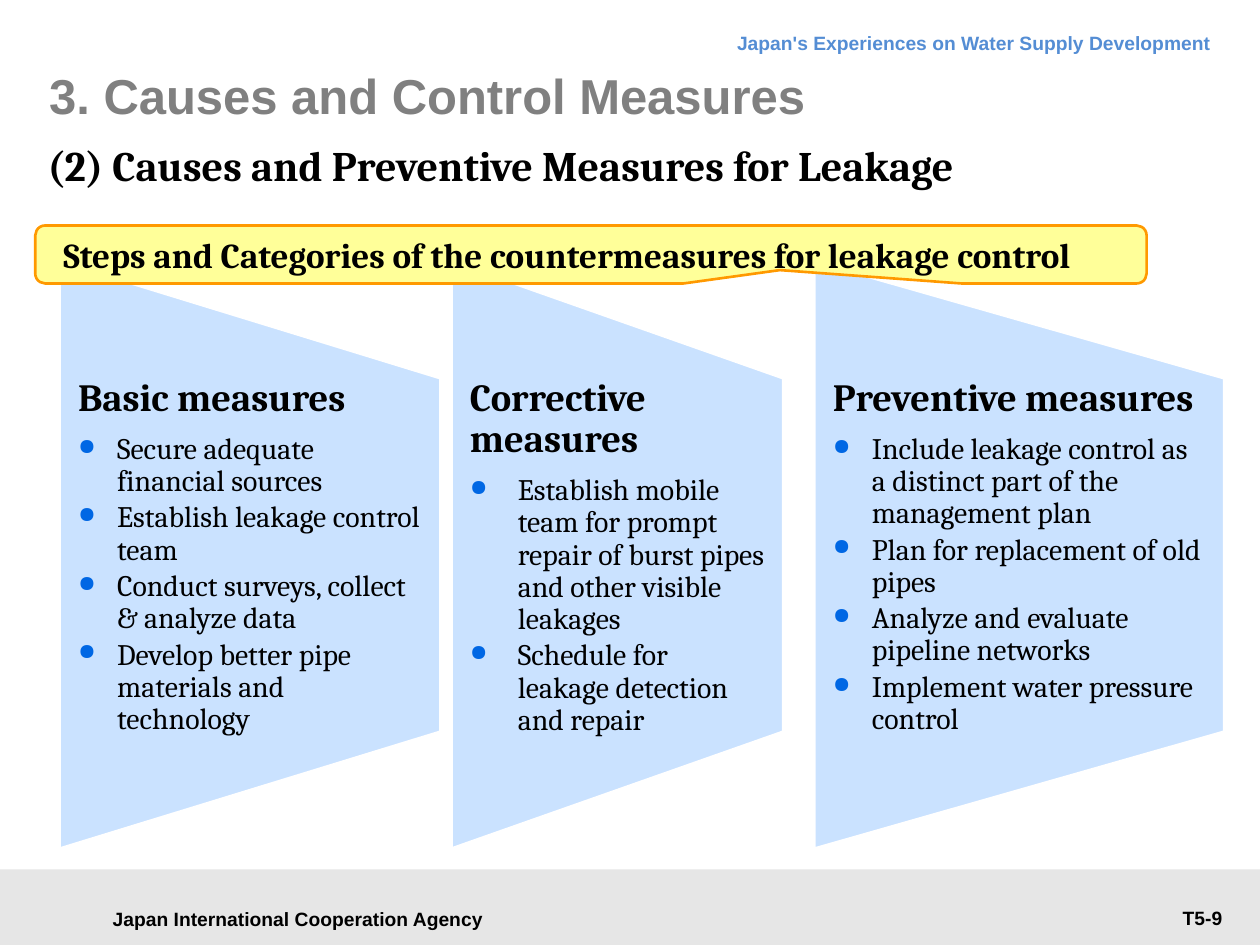
from lxml.etree import SubElement
from pptx import Presentation
from pptx.dml.color import RGBColor
from pptx.enum.shapes import MSO_SHAPE
from pptx.enum.text import MSO_ANCHOR, PP_ALIGN
from pptx.oxml.ns import qn
from pptx.util import Pt

PX = 9144
BLACK = "000000"
COLUMNS = [
    ((47, 207, 303, 467), 31, "Basic measures", [
        "Secure adequate financial sources",
        "Establish leakage control team",
        "Conduct surveys, collect & analyze data",
        "Develop better pipe materials and technology",
    ]),
    ((358, 207, 264, 467), 38, "Corrective measures", [
        "Establish mobile team for prompt repair of burst pipes and other visible leakages",
        "Schedule for leakage detection and repair",
    ]),
    ((646, 207, 326, 467), 31, "Preventive measures", [
        "Include leakage control as a distinct part of the management plan",
        "Plan for replacement of old pipes",
        "Analyze and evaluate pipeline networks",
        "Implement water pressure control",
    ]),
]


def px(*lengths):
    return [length * PX for length in lengths]


def color(value):
    return RGBColor.from_string(value)


def paint(shape, fill, line=None, width=0):
    shape.shadow.inherit = False
    shape.fill.solid()
    shape.fill.fore_color.rgb = color(fill)
    if line:
        shape.line.color.rgb = color(line)
        shape.line.width = Pt(width)
    else:
        shape.line.fill.background()


def set_frame(shape, insets, anchor):
    frame = shape.text_frame
    frame.word_wrap = True
    frame.vertical_anchor = anchor
    (frame.margin_left, frame.margin_top,
     frame.margin_right, frame.margin_bottom) = px(*insets)
    return frame


def write(paragraph, text, size, font="Cambria", ink=BLACK, bold=True, align=PP_ALIGN.LEFT):
    paragraph.text = text
    paragraph.alignment = align
    paragraph.font.size = Pt(size)
    paragraph.font.name = font
    paragraph.font.bold = bold
    paragraph.font.color.rgb = color(ink)


def add_label(slide, box, text, size, insets=(10, 5, 10, 5), anchor=MSO_ANCHOR.TOP,
              spacing=None, **style):
    shape = slide.shapes.add_textbox(*px(*box))
    paragraph = set_frame(shape, insets, anchor).paragraphs[0]
    write(paragraph, text, size, **style)
    if spacing:
        paragraph.line_spacing = Pt(spacing)


def add_bullet(paragraph, indent):
    properties = paragraph._p.get_or_add_pPr()
    properties.set("marL", str(indent * PX))
    properties.set("indent", str(-indent * PX))
    bullet_color = SubElement(properties, qn("a:buClr"))
    SubElement(bullet_color, qn("a:srgbClr"), val="0067E4")
    SubElement(properties, qn("a:buSzPct"), val="75000")
    SubElement(properties, qn("a:buChar"), char="●")


def add_column(slide, box, indent, heading, items):
    left, top, width, height = box
    slope = 93
    right, bottom = left + width, top + height
    builder = slide.shapes.build_freeform(*px(left, bottom), scale=1.0)
    corners = [(left, top), (right, top + slope), (right, bottom - slope)]
    builder.add_line_segments([px(*corner) for corner in corners], close=True)
    shape = builder.convert_to_shape()
    paint(shape, "CAE2FF", "FFFFFF", 2)
    frame = set_frame(shape, (15, slope, 15, slope), MSO_ANCHOR.TOP)
    title = frame.paragraphs[0]
    write(title, heading, 22)
    title.line_spacing = 0.9
    title.space_after = Pt(8)
    for item in items:
        paragraph = frame.add_paragraph()
        paragraph.level = 1
        add_bullet(paragraph, indent)
        write(paragraph, item, 17, bold=False)
        paragraph.line_spacing = 0.9
        paragraph.space_after = Pt(2.5)


def add_footer(slide, box):
    left, top, width, height = box
    band = slide.shapes.add_shape(MSO_SHAPE.RECTANGLE, *px(*box))
    paint(band, "E6E6E6")
    add_label(slide, (left + 71, top + 22, 331, 34), "Japan International Cooperation Agency",
              11, font="Arial", anchor=MSO_ANCHOR.MIDDLE, align=PP_ALIGN.CENTER)
    add_label(slide, (left + width - 177, top + 24, 157, 29), "T5-9",
              11, font="Arial", align=PP_ALIGN.RIGHT)


def add_heading(slide, box):
    left, top, width, height = box
    add_label(slide, (left + 244, top, 699, 38),
              "Japan's Experiences on Water Supply Development", 11,
              spacing=18, font="Arial", ink="548DD4", align=PP_ALIGN.RIGHT)
    add_label(slide, (left + 11, top + 23, 898, 79), "3. Causes and Control Measures", 28,
              insets=(0, 0, 0, 0), anchor=MSO_ANCHOR.MIDDLE, font="Arial", ink="808080")
    add_label(slide, (left, top + 93, 754, 45),
              "(2) Causes and Preventive Measures for Leakage", 24,
              insets=(10, 0, 0, 0), spacing=32)


def add_callout(slide, box):
    callout = slide.shapes.add_shape(MSO_SHAPE.ROUNDED_RECTANGULAR_CALLOUT, *px(*box))
    for index, value in enumerate((0.17, 0.27, 0.17)):
        callout.adjustments[index] = value
    paint(callout, "FFFF99", "FF9900", 1.5)
    frame = set_frame(callout, (20, 4, 12, 4), MSO_ANCHOR.MIDDLE)
    write(frame.paragraphs[0],
          "Steps and Categories of the countermeasures for leakage control", 20)


def main():
    presentation = Presentation()
    presentation.slide_width, presentation.slide_height = px(1000, 750)
    slide = presentation.slides.add_slide(presentation.slide_layouts[6])
    add_footer(slide, (0, 690, 1000, 60))
    for column in COLUMNS:
        add_column(slide, *column)
    add_heading(slide, (28, 13, 943, 138))
    add_callout(slide, (28, 179, 882, 46))
    presentation.save("out.pptx")


if __name__ == "__main__":
    main()
